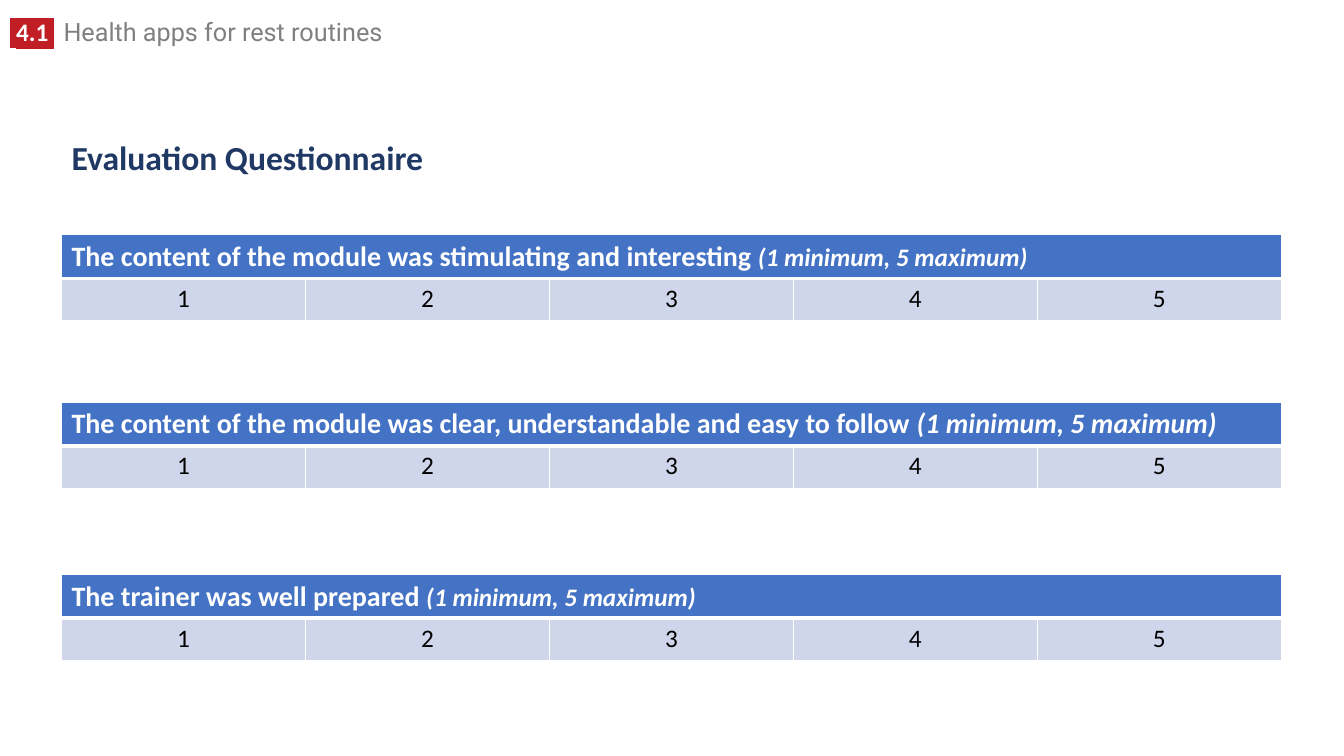
from lxml.etree import SubElement as Sub, Element
from pptx import Presentation
from pptx.dml.color import RGBColor as Rgb
from pptx.enum.text import MSO_ANCHOR as Anchor, PP_ALIGN as Align, MSO_AUTO_SIZE as Auto
from pptx.oxml.ns import qn
from pptx.util import Inches as In, Pt

WIDE, HIGH = 13.33, 7.5
LEFT, SPAN = 0.61, 12.1
ROW = 0.42
RED, BLUE, PALE, WHITE, BLACK = "C01E24", "4472C4", "CFD5EA", "FFFFFF", "000000"

TITLE = "Evaluation Questionnaire"
HEAD = [
    (" ", dict(size=18, name="Roboto", bold=True), WHITE, RED),
    ("4.1 ", dict(size=18, name="Calibri", bold=True), WHITE, RED),
    (" ", dict(size=24, name="Arial"), BLACK, None),
    ("Health apps for rest routines", dict(size=18, name="Roboto"), "808080", None),
]
HINT = "(1 minimum, 5 maximum)"
MARKS = ["1", "2", "3", "4", "5"]
ASKS = [
    ("The content of the module was stimulating and interesting ", 18, 2.33),
    ("The content of the module was clear, understandable and easy to follow ", 20, 3.99),
    ("The trainer was well prepared ", 18, 5.7),
]


def tint(code):
    return Rgb.from_string(code)


def write(para, text, form, color, mark=None):
    run = para.add_run()
    run.text = text
    for key, val in form.items():
        setattr(run.font, key, Pt(val) if key == "size" else val)
    run.font.color.rgb = tint(color)
    if mark:
        glow = Element(qn("a:highlight"))
        Sub(glow, qn("a:srgbClr"), val=mark)
        run.font._element.find(qn("a:solidFill")).addnext(glow)


def paint(cell, color, base):
    props = cell._tc.get_or_add_tcPr()
    for side, wide in dict(L=1, R=1, T=1, B=base).items():
        line = Sub(props, qn("a:ln" + side), w=str(Pt(wide)))
        Sub(Sub(line, qn("a:solidFill")), qn("a:srgbClr"), val=WHITE)
    cell.fill.solid()
    cell.fill.fore_color.rgb = tint(color)


def ask(slide, text, size, top):
    count = len(MARKS)
    box = slide.shapes.add_table(2, count, In(LEFT), In(top), In(SPAN), In(2 * ROW))
    grid = box.table
    for col, mark in enumerate(MARKS):
        grid.columns[col].width = In(SPAN / count)
        paint(grid.cell(0, col), BLUE, 3)
        cell = grid.cell(1, col)
        paint(cell, PALE, 1)
        para = cell.text_frame.paragraphs[0]
        para.alignment = Align.CENTER
        write(para, mark, dict(size=18, name="Calibri", bold=False), BLACK)
    first = grid.cell(0, 0)
    first.merge(grid.cell(0, count - 1))
    para = first.text_frame.paragraphs[0]
    bold = dict(name="Calibri", bold=True)
    write(para, text, dict(bold, size=20), WHITE)
    write(para, HINT, dict(bold, size=size, italic=True), WHITE)


def main():
    deck = Presentation()
    deck.slide_width, deck.slide_height = In(WIDE), In(HIGH)
    slide = deck.slides.add_slide(deck.slide_layouts[5])

    head = slide.shapes.add_textbox(0, In(0.11), In(9.52), In(0.42)).text_frame
    head.word_wrap = True
    head.auto_size = Auto.SHAPE_TO_FIT_TEXT
    para = head.paragraphs[0]
    para.line_spacing = 0.8
    for part in HEAD:
        write(para, *part)

    title = slide.shapes.title
    place = dict(left=LEFT, top=1.18, width=SPAN, height=0.8)
    for key, val in place.items():
        setattr(title, key, In(val))
    title.text_frame.vertical_anchor = Anchor.MIDDLE
    para = title.text_frame.paragraphs[0]
    para.alignment = Align.LEFT
    para.line_spacing = 0.9
    write(para, TITLE, dict(size=24, name="Calibri", bold=True), "203864")

    for item in ASKS:
        ask(slide, *item)
    deck.save("out.pptx")


if __name__ == "__main__":
    main()
